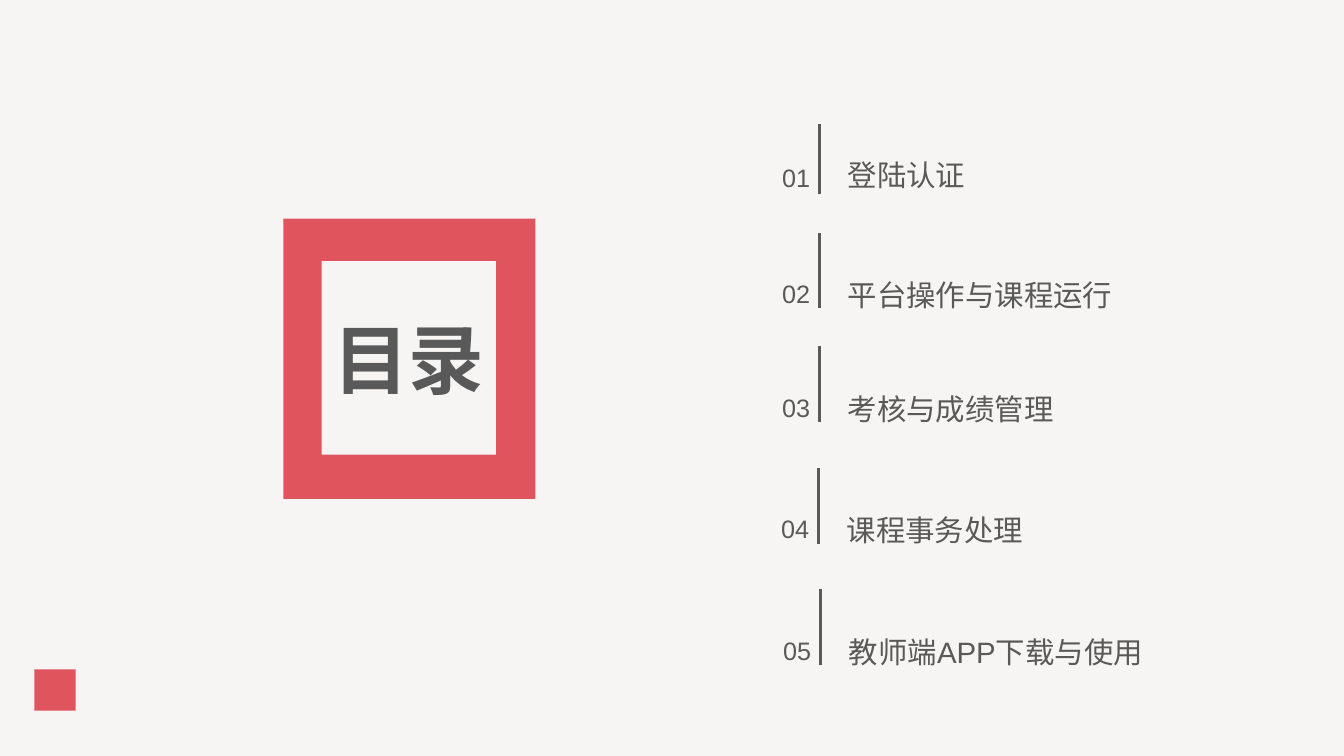
import pptx
import pptx.dml.color
import pptx.enum.shapes
import pptx.enum.text
import pptx.oxml.ns
import pptx.util
from lxml import etree

Inches = pptx.util.Inches
RGBColor = pptx.dml.color.RGBColor
Anchor = pptx.enum.text.MSO_ANCHOR
Align = pptx.enum.text.PP_ALIGN

PAPER = RGBColor(0xF7, 0xF5, 0xF3)
RED = RGBColor(0xE0, 0x54, 0x5D)
GREY = RGBColor(0x59, 0x59, 0x59)

CHAPTERS = [
    ("登陆认证", 8.13, 1.23, 1.92, 1.56, 1.56, 1.5),
    ("平台操作与课程运行", 8.13, 2.31, 3.06, 2.71, 2.75, 3),
    ("考核与成绩管理", 8.13, 3.43, 4.19, 3.84, 3.88, 2.4),
    ("课程事务处理", 8.12, 4.64, 5.4, 5.04, 5.08, 2.1),
    ("教师端APP下载与使用", 8.14, 5.84, 6.6, 6.25, 6.29, 3.5),
]


def add_block(page, left, top, width, height, color):
    block = page.shapes.add_shape(
        pptx.enum.shapes.MSO_SHAPE.RECTANGLE,
        Inches(left), Inches(top), Inches(width), Inches(height))
    block.shadow.inherit = False
    block.fill.solid()
    block.fill.fore_color.rgb = color
    block.line.fill.background()


def add_label(page, left, top, width, height, text, size,
              anchor=Anchor.BOTTOM, align=Align.LEFT, bold=False):
    box = page.shapes.add_textbox(
        Inches(left), Inches(top), Inches(width), Inches(height))
    frame = box.text_frame
    frame.word_wrap = True
    frame.vertical_anchor = anchor
    para = frame.paragraphs[0]
    para.alignment = align
    span = para.add_run()
    span.text = text
    span.font.name = "Arial"
    span.font.size = pptx.util.Pt(size)
    span.font.bold = bold
    span.font.color.rgb = GREY


def add_bar(page, x, top, bottom):
    bar = page.shapes.add_connector(
        pptx.enum.shapes.MSO_CONNECTOR.STRAIGHT,
        Inches(x), Inches(bottom), Inches(x), Inches(top))
    bar.line.color.rgb = GREY
    bar.line.width = pptx.util.Pt(2.25)
    etree.SubElement(bar.element.spPr, pptx.oxml.ns.qn("a:effectLst"))


def add_chapter(page, number, title, x, bar_top, bar_bottom,
                number_top, title_top, title_width):
    add_bar(page, x, bar_top, bar_bottom)
    add_label(page, x - 0.47, number_top, 0.53, 0.4, f"{number:02d}", 18)
    add_label(page, x + 0.18, title_top, title_width, 0.4, title, 21)


def main():
    deck = pptx.Presentation()
    deck.slide_width = Inches(13.33)
    deck.slide_height = Inches(7.5)
    page = deck.slides.add_slide(deck.slide_layouts[6])
    page.background.fill.solid()
    page.background.fill.fore_color.rgb = PAPER

    add_block(page, 2.81, 2.17, 2.5, 2.78, RED)
    add_block(page, 3.19, 2.59, 1.73, 1.92, PAPER)
    add_block(page, 0.34, 6.64, 0.41, 0.41, RED)
    add_label(page, 3.04, 3.27, 2.03, 0.57, "目录", 54,
              anchor=Anchor.MIDDLE, align=Align.CENTER, bold=True)
    for number, chapter in enumerate(CHAPTERS, start=1):
        add_chapter(page, number, *chapter)
    deck.save("out.pptx")


if __name__ == "__main__":
    main()
